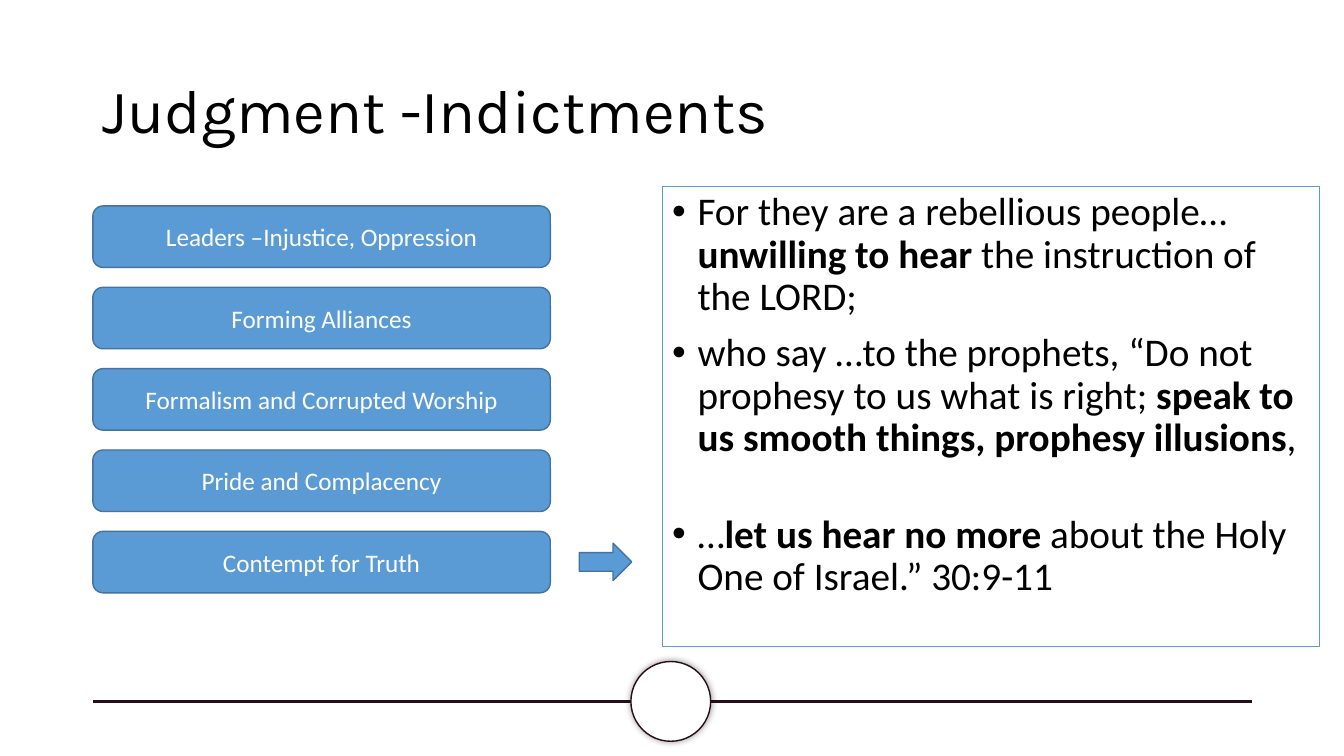
from lxml import etree
from pptx import Presentation
from pptx.dml.color import RGBColor
from pptx.enum.shapes import MSO_CONNECTOR, MSO_SHAPE
from pptx.enum.text import MSO_ANCHOR, PP_ALIGN
from pptx.oxml.ns import qn
from pptx.util import Cm, Pt

LINE = MSO_CONNECTOR.STRAIGHT
OVAL, RECT = MSO_SHAPE.OVAL, MSO_SHAPE.RECTANGLE
ROUND, ARROW = MSO_SHAPE.ROUNDED_RECTANGLE, MSO_SHAPE.RIGHT_ARROW
MIDDLE, TOP = MSO_ANCHOR.MIDDLE, MSO_ANCHOR.TOP
LEFT, CENTER = PP_ALIGN.LEFT, PP_ALIGN.CENTER

COLORS = {"white": "FFFFFF", "black": "000000", "wine": "290D15",
          "blue": "5B9BD5", "navy": "43739E"}

TOPICS = ["Leaders –Injustice, Oppression", "Forming Alliances",
          "Formalism and Corrupted Worship", "Pride and Complacency",
          "Contempt for Truth"]

# Space before in points, then plain, bold and plain text
VERSES = [
    (0, "For they are a rebellious people… ", "unwilling to hear ",
     "the instruction of the LORD;"),
    (10, "who say …to the prophets, “Do not prophesy to us what is right; ",
     "speak to us smooth things, prophesy illusions", ","),
    (39, "…", "let us hear no more ", "about the Holy One of Israel.” 30:9-11"),
]


def add_box(kind, place, fill, line, width):
    """Add a shape without shadow; place is left, top, width, height in cm."""
    box = slide.shapes.add_shape(kind, *map(Cm, place))
    box.shadow.inherit = False
    if fill:
        box.fill.solid()
        box.fill.fore_color.rgb = RGBColor.from_string(COLORS[fill])
    else:
        box.fill.background()
    box.line.color.rgb = RGBColor.from_string(COLORS[line])
    box.line.width = Pt(width)
    return box


def set_font(par, name, size, color):
    par.font.name = name
    par.font.size = Pt(size)
    par.font.color.rgb = RGBColor.from_string(COLORS[color])


deck = Presentation()
deck.slide_width, deck.slide_height = Cm(33.87), Cm(19.05)
slide = deck.slides.add_slide(deck.slide_layouts[6])

# Footer rule and ring
rule = slide.shapes.add_connector(LINE, Cm(2.34), Cm(17.68), Cm(31.55), Cm(17.68))
rule.line.color.rgb = RGBColor.from_string(COLORS["wine"])
rule.line.width = Pt(2.25)
etree.SubElement(rule._element.spPr, qn("a:effectLst"))

ring = add_box(OVAL, (15.9, 16.67, 2.01, 2.01), "white", "wine", 1)
glow = etree.SubElement(ring._element.spPr.find(qn("a:effectLst")),
                        qn("a:outerShdw"), blurRad=str(Pt(5)), dist="0", dir="0")
tint = etree.SubElement(glow, qn("a:srgbClr"), val=COLORS["black"])
etree.SubElement(tint, qn("a:alpha"), val="40000")

# Title
title = slide.shapes.add_textbox(Cm(2.34), Cm(1.02), Cm(29.21), Cm(3.68))
frame = title.text_frame
frame.word_wrap = True
frame.vertical_anchor = MIDDLE
par = frame.paragraphs[0]
par.text = "Judgment -Indictments"
par.line_spacing = 0.9
set_font(par, "Karla", 44, "black")

# Verses
panel = add_box(RECT, (16.69, 4.71, 16.56, 11.58), None, "blue", 0.75)
frame = panel.text_frame
frame.word_wrap = True
frame.vertical_anchor = TOP
for i, (gap, *parts) in enumerate(VERSES):
    par = frame.add_paragraph() if i else frame.paragraphs[0]
    par.alignment = LEFT
    par.line_spacing = 0.9
    par.space_before = Pt(gap)
    props = par._p.get_or_add_pPr()
    props.set("marL", str(Cm(0.64)))
    props.set("indent", str(-Cm(0.64)))
    etree.SubElement(props, qn("a:buFont"), typeface="Arial")
    etree.SubElement(props, qn("a:buChar"), char="•")
    set_font(par, "Calibri", 28, "black")
    for j, text in enumerate(parts):
        run = par.add_run()
        run.text = text
        run.font.bold = j == 1

# Topics, with the arrow at the last one
for i, topic in enumerate(TOPICS):
    box = add_box(ROUND, (2.34, 5.19 + 2.05 * i, 11.53, 1.55), "blue", "navy", 1)
    frame = box.text_frame
    frame.word_wrap = True
    frame.vertical_anchor = MIDDLE
    par = frame.paragraphs[0]
    par.text = topic
    par.alignment = CENTER
    set_font(par, "Calibri", 18, "white")

add_box(ARROW, (14.6, 13.69, 1.32, 0.94), "blue", "navy", 1)

deck.save("out.pptx")
